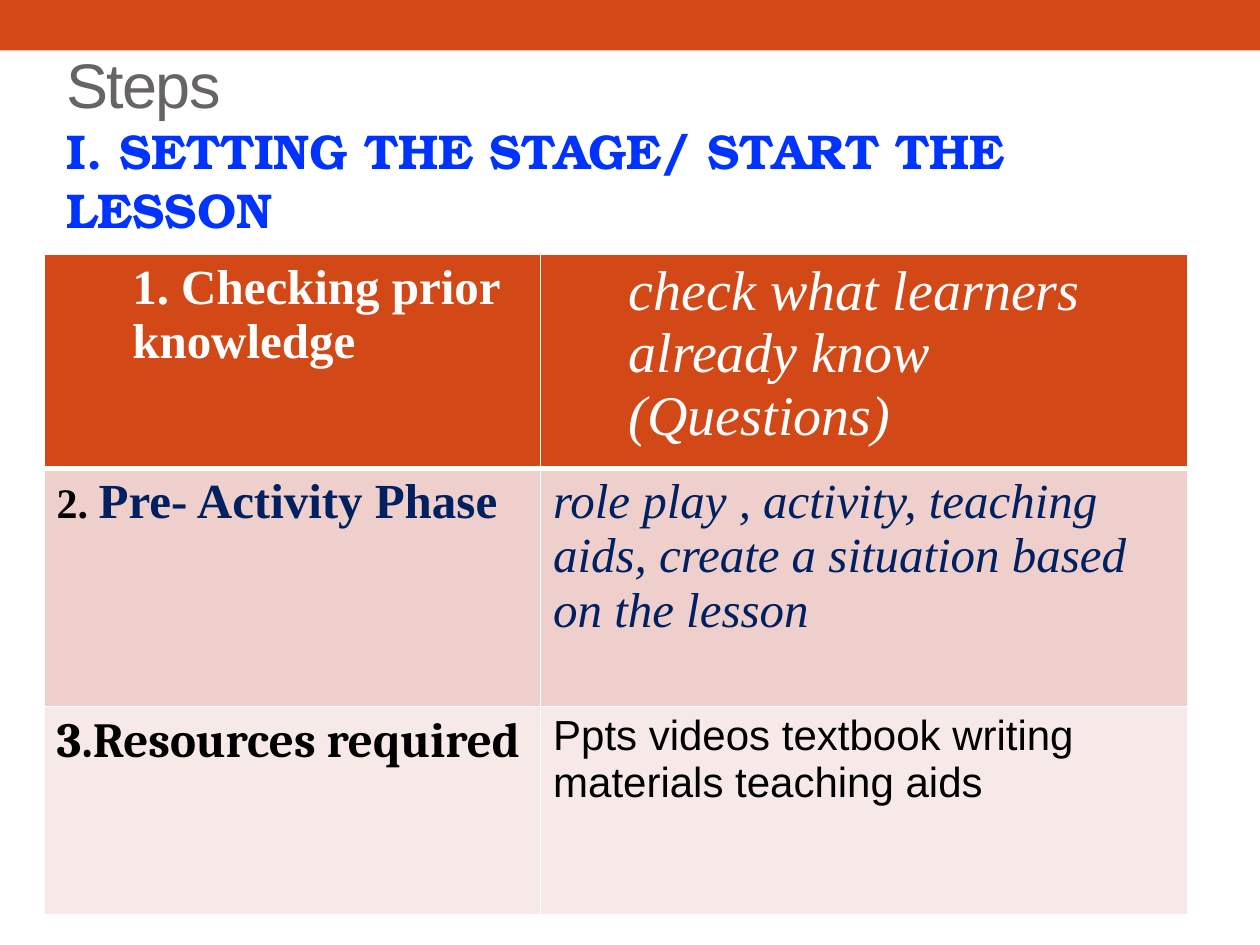
from lxml.etree import SubElement
from pptx import Presentation
from pptx.dml.color import RGBColor
from pptx.enum.shapes import MSO_SHAPE as Shape
from pptx.enum.text import MSO_ANCHOR as Anchor
from pptx.oxml.ns import qn
from pptx.util import Pt

COLORS = {
    "orange": "D34817", "grey": "696464", "blue": "0033FF", "navy": "002060",
    "white": "FFFFFF", "black": "000000", "rose": "EFCFCC", "blush": "F7E9E8",
}
SERIF = "Times New Roman"

# Content: each run is (text, color, format values)
HEADING = [
    ("Steps", "grey", {"name": "Arial", "size": Pt(36)}),
    ("I. SETTING THE STAGE/ START THE LESSON", "blue",
     {"name": "TeX Gyre Bonum", "size": Pt(27.9), "bold": True}),
]
STEPS = [
    {"fill": "orange", "height": 118, "indent": 43.2, "rule": 3, "cells": [
        [("1. Checking prior knowledge", "white",
          {"name": SERIF, "size": Pt(28), "bold": True})],
        [("check what learners already know (Questions)", "white",
          {"name": SERIF, "size": Pt(32), "bold": False, "italic": True})],
    ]},
    {"fill": "rose", "height": 136, "indent": 0, "rule": 1, "cells": [
        [("2. ", "black", {"name": SERIF, "size": Pt(24), "bold": True}),
         ("Pre- Activity Phase", "navy",
          {"name": SERIF, "size": Pt(28), "bold": True})],
        [("role play , activity, teaching aids, create a situation based "
          "on the lesson", "navy",
          {"name": SERIF, "size": Pt(28), "italic": True})],
    ]},
    {"fill": "blush", "height": 118.8, "indent": 0, "rule": 1, "cells": [
        [("3.Resources required", "black",
          {"name": "Cambria", "size": Pt(28), "bold": True})],
        [("Ppts videos textbook writing materials teaching aids", "black",
          {"name": "Arial", "size": Pt(24)})],
    ]},
]
COLUMN_WIDTHS = [283.7, 370]
TABLE_LEFT, TABLE_TOP = 25.2, 145.4


def rgb(color):
    return RGBColor.from_string(COLORS[color])


def add_run(paragraph, text, color, values):
    run = paragraph.add_run()
    run.text = text
    for key, value in values.items():
        setattr(run.font, key, value)
    run.font.color.rgb = rgb(color)
    return run


def add_borders(cell, widths):
    """Draw white cell borders; they must precede the fill."""
    properties = cell._tc.get_or_add_tcPr()
    for side, width in widths.items():
        line = SubElement(properties, qn(f"a:{side}"), w=str(Pt(width)))
        fill = SubElement(line, qn("a:solidFill"))
        SubElement(fill, qn("a:srgbClr"), val=COLORS["white"])


deck = Presentation()
deck.slide_width, deck.slide_height = Pt(720), Pt(540)
slide = deck.slides.add_slide(deck.slide_layouts[6])

# Top band
band = slide.shapes.add_shape(Shape.RECTANGLE, 0, 0, Pt(720), Pt(28.8))
band.shadow.inherit = False
band.fill.solid()
band.fill.fore_color.rgb = rgb("orange")
band.line.fill.background()

# Heading
heading = slide.shapes.add_textbox(Pt(31), Pt(26), Pt(653), Pt(108)).text_frame
heading.word_wrap = True
heading.vertical_anchor = Anchor.TOP
heading.margin_top = heading.margin_bottom = 0
title = add_run(heading.paragraphs[0], *HEADING[0])
title.font._element.set("spc", "-100")
add_run(heading.add_paragraph(), *HEADING[1])

# Table of steps
table = slide.shapes.add_table(
    len(STEPS), len(COLUMN_WIDTHS), Pt(TABLE_LEFT), Pt(TABLE_TOP),
    Pt(sum(COLUMN_WIDTHS)), Pt(sum(step["height"] for step in STEPS))).table
for column, width in zip(table.columns, COLUMN_WIDTHS):
    column.width = Pt(width)

rule_above = 1
for row, step in zip(table.rows, STEPS):
    row.height = Pt(step["height"])
    for cell, runs in zip(row.cells, step["cells"]):
        add_borders(cell, {"lnL": 1, "lnR": 1, "lnT": rule_above, "lnB": step["rule"]})
        cell.fill.solid()
        cell.fill.fore_color.rgb = rgb(step["fill"])
        paragraph = cell.text_frame.paragraphs[0]
        paragraph._p.get_or_add_pPr().set("marL", str(Pt(step["indent"])))
        for run in runs:
            add_run(paragraph, *run)
    rule_above = step["rule"]

deck.save("out.pptx")
